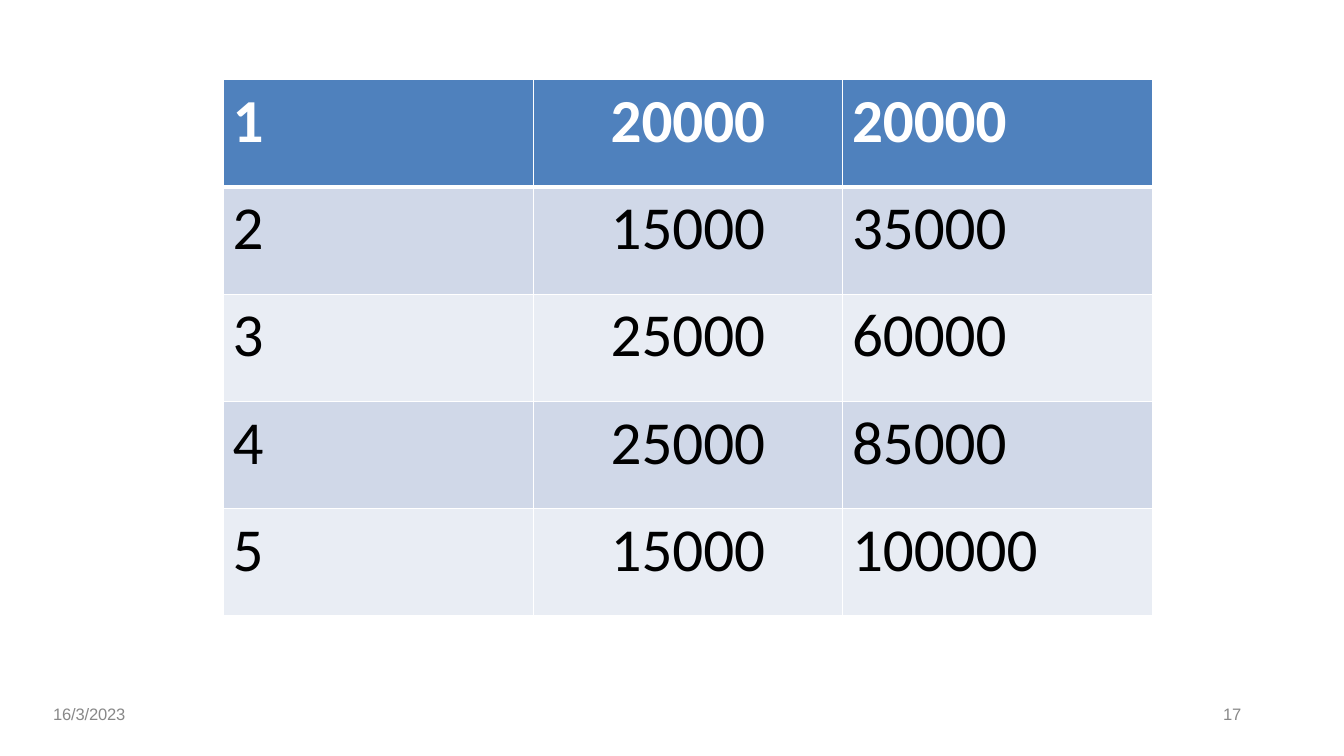
from dataclasses import dataclass

from lxml.etree import SubElement
from pptx import Presentation
from pptx.dml.color import RGBColor
from pptx.enum.text import MSO_AUTO_SIZE as AutoSize, PP_ALIGN as Align
from pptx.oxml.ns import qn
from pptx.slide import Slide
from pptx.table import _Cell as Cell
from pptx.util import Emu, Pt

EMU_PER_PX = 9144
WHITE, BLACK, GREY = "FFFFFF", "000000", "888888"
HEADER_FILL = "4F81BD"
BAND_FILLS = ("E9EDF4", "D0D8E8")
ROWS = (
    ("1", "20000", "20000"),
    ("2", "15000", "35000"),
    ("3", "25000", "60000"),
    ("4", "25000", "85000"),
    ("5", "15000", "100000"),
)
ALIGNS = (Align.LEFT, Align.CENTER, Align.LEFT)
COL_WIDTH, ROW_HEIGHT = 338, 117


@dataclass
class FooterItem:
    text: str
    left: int
    top: int
    width: int
    height: int
    indent: int


FOOTER = (
    FooterItem("16/3/2023", 57, 769, 110, 21, 1),
    FooterItem("17", 1322, 769, 34, 42, 13),
)


def px(n: int) -> Emu:
    return Emu(n * EMU_PER_PX)


def color(value: str) -> RGBColor:
    return RGBColor.from_string(value)


def add_footer(s: Slide, item: FooterItem) -> None:
    sp = s.shapes.add_textbox(px(item.left), px(item.top), px(item.width), px(item.height))
    tf = sp.text_frame
    tf.word_wrap = True
    tf.auto_size = AutoSize.SHAPE_TO_FIT_TEXT
    tf.margin_left = tf.margin_right = tf.margin_top = tf.margin_bottom = 0
    p = tf.paragraphs[0]
    p._p.get_or_add_pPr().set("marL", str(px(item.indent)))
    p.line_spacing = Pt(15.3)
    r = p.add_run()
    r.text = item.text
    r.font.name = "Arial"
    r.font.size = Pt(13)
    r.font.color.rgb = color(GREY)
    r._r.get_or_add_rPr().set("spc", "-10")


def set_border(cell: Cell, side: str, points: int) -> None:
    ln = SubElement(cell._tc.get_or_add_tcPr(), qn(f"a:ln{side}"), w=str(Pt(points)))
    fill = SubElement(ln, qn("a:solidFill"))
    SubElement(fill, qn("a:srgbClr"), val=WHITE)


def fill_cell(cell: Cell, text: str, row: int, align: Align) -> None:
    header = row == 0
    set_border(cell, "L", 1)
    set_border(cell, "R", 1)
    set_border(cell, "T", 3 if row == 1 else 1)
    set_border(cell, "B", 3 if header else 1)
    cell.fill.solid()
    cell.fill.fore_color.rgb = color(HEADER_FILL if header else BAND_FILLS[row % 2])
    p = cell.text_frame.paragraphs[0]
    p.text = text
    p.alignment = align
    p.font.name = "Calibri"
    p.font.size = Pt(48)
    p.font.bold = header
    p.font.color.rgb = color(WHITE if header else BLACK)


def add_totals_table(s: Slide) -> None:
    width, height = COL_WIDTH * len(ALIGNS), ROW_HEIGHT * len(ROWS)
    table = s.shapes.add_table(
        len(ROWS), len(ALIGNS), px(244), px(87), px(width), px(height)
    ).table
    for col in table.columns:
        col.width = px(COL_WIDTH)
    for i, values in enumerate(ROWS):
        table.rows[i].height = px(ROW_HEIGHT)
        for j, (text, align) in enumerate(zip(values, ALIGNS)):
            fill_cell(table.cell(i, j), text, i, align)


def main() -> None:
    prs = Presentation()
    prs.slide_width, prs.slide_height = px(1467), px(825)
    s = prs.slides.add_slide(prs.slide_layouts[6])
    for item in FOOTER:
        add_footer(s, item)
    add_totals_table(s)
    prs.save("out.pptx")


if __name__ == "__main__":
    main()
